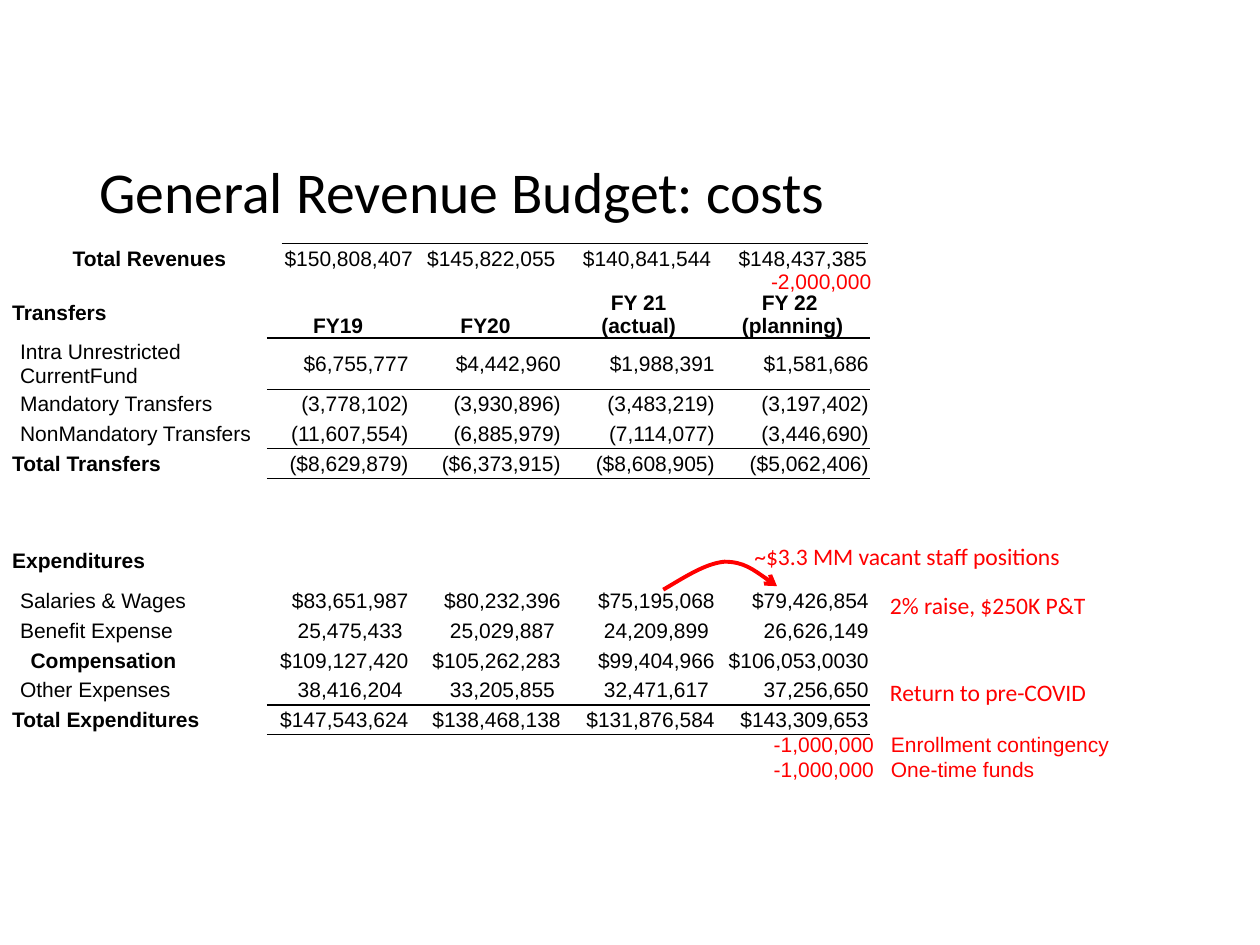
import lxml.etree
import pptx
import pptx.dml.color
import pptx.enum.text
import pptx.oxml
import pptx.oxml.ns
import pptx.util

Pt = pptx.util.Pt
ALIGN = pptx.enum.text.PP_ALIGN
ANCHOR = pptx.enum.text.MSO_ANCHOR
AUTO_SIZE = pptx.enum.text.MSO_AUTO_SIZE
qn = pptx.oxml.ns.qn

BLACK, WHITE, RED = "000000", "FFFFFF", "FF0000"
PLAIN_TABLE_STYLE = "{2D5ABB26-0587-4C30-8999-92F81FD0307C}"

REVENUE_ROWS = [
    ("Total Revenues", "$150,808,407", "$145,822,055", "$140,841,544", "$148,437,385"),
]
BUDGET_ROWS = [
    ("Transfers", "FY19", "FY20", "FY 21\n(actual)", "FY 22 \n(planning)"),
    ("Intra Unrestricted CurrentFund", "$6,755,777", "$4,442,960", "$1,988,391", "$1,581,686"),
    ("Mandatory Transfers", "(3,778,102)", "(3,930,896)", "(3,483,219)", "(3,197,402)"),
    ("NonMandatory Transfers", "(11,607,554)", "(6,885,979)", "(7,114,077)", "(3,446,690)"),
    ("Total Transfers", "($8,629,879)", "($6,373,915)", "($8,608,905)", "($5,062,406)"),
    ("",) * 5,
    ("Expenditures", "", "", "", ""),
    ("Salaries & Wages", "$83,651,987", "$80,232,396", "$75,195,068", "$79,426,854"),
    ("Benefit Expense", "25,475,433 ", "25,029,887 ", "24,209,899 ", "26,626,149"),
    ("Compensation", "$109,127,420", "$105,262,283", "$99,404,966", "$106,053,0030"),
    ("Other Expenses", "38,416,204 ", "33,205,855 ", "32,471,617 ", "37,256,650"),
    ("Total Expenditures", "$147,543,624", "$138,468,138", "$131,876,584", "$143,309,653"),
    ("",) * 5,
    ("",) * 5,
]
BUDGET_HEIGHTS = [29.25, 29.25, 17, 17, 17, 32.25, 29.25] + [17] * 7
BOLD_LABELS = {"Total Revenues", "Transfers", "Total Transfers", "Expenditures",
               "Compensation", "Total Expenditures"}
LABEL_INDENTS = {"Intra Unrestricted CurrentFund": 5, "Mandatory Transfers": 5,
                 "NonMandatory Transfers": 5, "Salaries & Wages": 5,
                 "Benefit Expense": 5, "Compensation": 11, "Other Expenses": 5}


def color(value):
    return pptx.dml.color.RGBColor.from_string(value)


def format_paragraph(paragraph, size, font_name, font_color, bold=False, alignment=ALIGN.LEFT):
    paragraph.alignment = alignment
    paragraph.font.size = Pt(size)
    paragraph.font.name = font_name
    paragraph.font.bold = bold
    paragraph.font.color.rgb = color(font_color)


def add_title(slide, text):
    title = slide.shapes.title
    title.left, title.top, title.width, title.height = Pt(49.5), Pt(72), Pt(621), Pt(78.5)
    frame = title.text_frame
    frame.text = text
    frame.word_wrap = True
    frame.auto_size = AUTO_SIZE.NONE
    frame.vertical_anchor = ANCHOR.MIDDLE
    paragraph = frame.paragraphs[0]
    format_paragraph(paragraph, 33, "Calibri", BLACK)
    paragraph.line_spacing = 0.9


def fill_cell(cell, text, bold, alignment, anchor, indent):
    cell.fill.solid()
    cell.fill.fore_color.rgb = color(WHITE)
    cell.margin_left, cell.margin_top = Pt(indent), Pt(0.5)
    cell.margin_right, cell.margin_bottom = Pt(0.5), 0
    cell.vertical_anchor = anchor
    cell.text_frame.text = text
    for paragraph in cell.text_frame.paragraphs:
        format_paragraph(paragraph, 12, "Arial", BLACK, bold, alignment)


def add_budget_table(slide, left, top, column_widths, row_heights, rows, has_header):
    shape = slide.shapes.add_table(len(rows), len(column_widths), Pt(left), Pt(top),
                                   Pt(sum(column_widths)), Pt(sum(row_heights)))
    table = shape.table
    table.first_row = table.horz_banding = False
    table._tbl.tblPr.find(qn("a:tableStyleId")).text = PLAIN_TABLE_STYLE
    for column, width in zip(table.columns, column_widths):
        column.width = Pt(width)
    for row_index, (row, height, texts) in enumerate(zip(table.rows, row_heights, rows)):
        row.height = Pt(height)
        label = texts[0]
        fill_cell(row.cells[0], label, label in BOLD_LABELS, ALIGN.LEFT,
                  ANCHOR.MIDDLE, LABEL_INDENTS.get(label, 0.5))
        is_header = has_header and row_index == 0
        alignment = ALIGN.CENTER if is_header else ALIGN.RIGHT
        anchor = ANCHOR.BOTTOM if is_header else ANCHOR.MIDDLE
        for column_index in range(1, len(texts)):
            fill_cell(row.cells[column_index], texts[column_index], is_header,
                      alignment, anchor, 0.5)
    return table


def add_rule(table, row_index, side):
    for cell in list(table.rows[row_index].cells)[1:]:
        border = pptx.oxml.parse_xml(
            f'<a:{side} {pptx.oxml.ns.nsdecls("a")} w="{Pt(1)}"><a:solidFill>'
            f'<a:srgbClr val="{BLACK}"/></a:solidFill></a:{side}>')
        cell._tc.get_or_add_tcPr().insert(0, border)


def add_note(slide, left, top, width, height, text, size, font_name, wrap=True, tab=None):
    shape = slide.shapes.add_textbox(Pt(left), Pt(top), Pt(width), Pt(height))
    frame = shape.text_frame
    frame.text = text
    frame.word_wrap = wrap
    frame.auto_size = AUTO_SIZE.SHAPE_TO_FIT_TEXT
    for paragraph in frame.paragraphs:
        format_paragraph(paragraph, size, font_name, RED)
        if tab:
            tabs = pptx.oxml.parse_xml(
                f'<a:tabLst {pptx.oxml.ns.nsdecls("a")}>'
                f'<a:tab pos="{Pt(tab)}" algn="l"/></a:tabLst>')
            paragraph._p.get_or_add_pPr().insert(0, tabs)


def add_curved_arrow(slide, start, control_points):
    builder = slide.shapes.build_freeform(Pt(start[0]), Pt(start[1]))
    builder.add_line_segments([(Pt(x), Pt(y)) for x, y in control_points], close=False)
    shape = builder.convert_to_shape()
    shape.shadow.inherit = False
    shape.fill.background()
    shape.line.color.rgb = color(RED)
    shape.line.width = Pt(2.25)
    lxml.etree.SubElement(shape.line._get_or_add_ln(), qn("a:tailEnd"), type="arrow")
    segments = list(shape._element.iter(qn("a:lnTo")))
    for first in range(0, len(segments), 3):
        curve = lxml.etree.Element(qn("a:cubicBezTo"))
        segments[first].addprevious(curve)
        for segment in segments[first:first + 3]:
            curve.append(segment[0])
            segment.getparent().remove(segment)


def main():
    presentation = pptx.Presentation()
    presentation.slide_width, presentation.slide_height = Pt(720), Pt(540)
    slide = presentation.slides.add_slide(presentation.slide_layouts[5])

    add_title(slide, "General Revenue Budget: costs")
    budget = add_budget_table(slide, 6.5, 164, [146, 81.5, 87, 88, 88],
                              BUDGET_HEIGHTS, BUDGET_ROWS, True)
    for row_index in (0, 3, 10):
        add_rule(budget, row_index, "lnB")
        add_rule(budget, row_index + 1, "lnT")
    add_note(slide, 501.5, 334, 132.5, 24, "2% raise, $250K P&T", 13.5, "Calibri")
    add_note(slide, 501.5, 384, 132.5, 24, "Return to pre-COVID", 13.5, "Calibri")
    revenue = add_budget_table(slide, 41, 139, [120, 75.5, 81.5, 89, 89],
                               [18], REVENUE_ROWS, False)
    add_rule(revenue, 0, "lnT")
    add_curved_arrow(slide, (379, 337), [(391, 330), (403, 322), (414, 321),
                                         (425, 321), (434, 328), (444, 335)])
    add_note(slide, 424, 306, 191.5, 24, "~$3.3 MM vacant staff positions",
             13.5, "Calibri", wrap=False)
    add_note(slide, 433.5, 150, 81.5, 21.5, "-2,000,000", 12, "Arial")
    add_note(slide, 435, 414.5, 212.5, 36,
             "-1,000,000\tEnrollment contingency\n-1,000,000\tOne-time funds",
             12, "Arial", tab=67)
    presentation.save("out.pptx")


if __name__ == "__main__":
    main()
